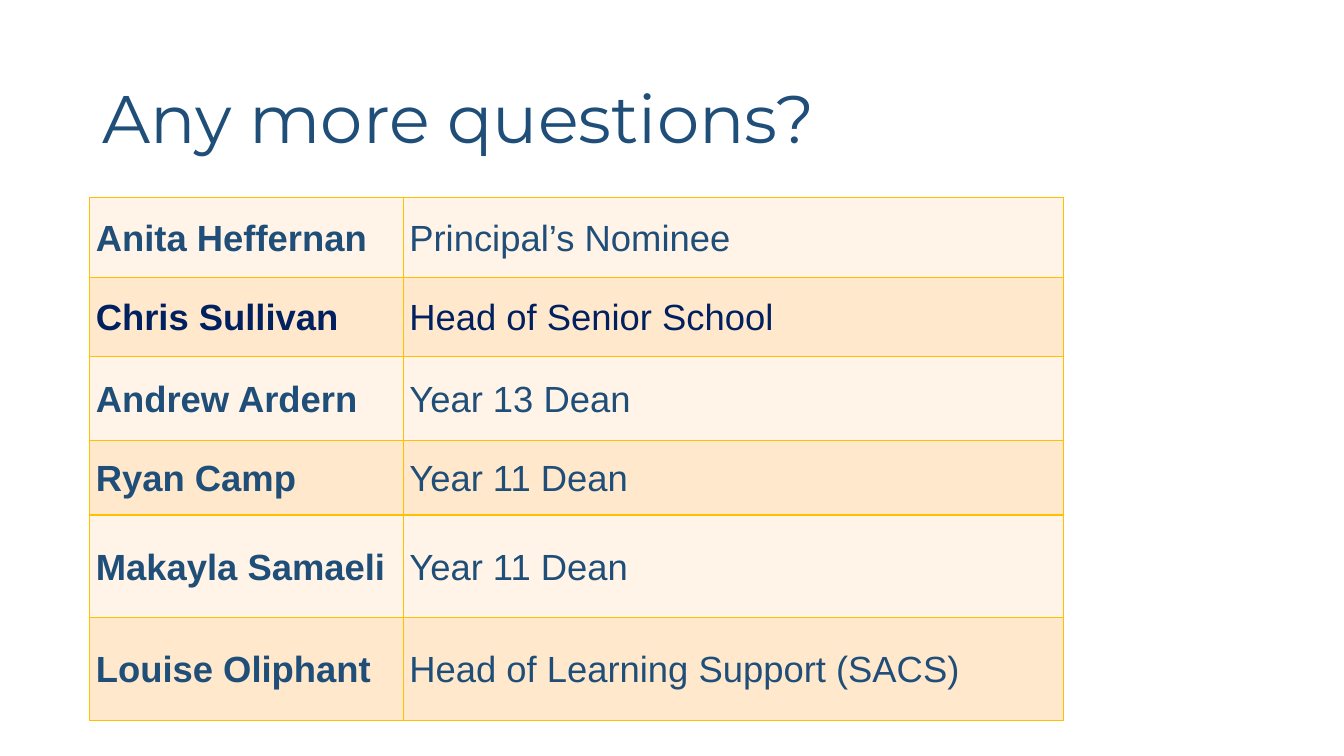
from dataclasses import dataclass

from lxml.etree import SubElement
from pptx import Presentation
from pptx.dml.color import RGBColor
from pptx.enum.text import MSO_ANCHOR
from pptx.oxml.ns import qn
from pptx.slide import Slide
from pptx.table import _Cell
from pptx.text.text import TextFrame
from pptx.util import Inches, Pt


@dataclass(frozen=True)
class Theme:
    blue: str = "1F4E79"
    navy: str = "002060"
    gold: str = "FFC000"
    bands: tuple[str, str] = ("FFF4E7", "FFE8CC")
    head: str = "Montserrat"
    body: str = "Arial"
    large: int = 48
    small: int = 26
    rule: int = 1


THEME = Theme()


@dataclass(frozen=True)
class Person:
    name: str
    role: str
    high: float
    color: str = THEME.blue


STAFF = (
    Person("Anita Heffernan", "Principal’s Nominee", 0.79),
    Person("Chris Sullivan", "Head of Senior School", 0.79, THEME.navy),
    Person("Andrew Ardern", "Year 13 Dean", 0.83),
    Person("Ryan Camp", "Year 11 Dean", 0.74),
    Person("Makayla Samaeli", "Year 11 Dean", 1.02),
    Person("Louise Oliphant", "Head of Learning Support (SACS)", 1.02),
)
WIDTHS = (3.11, 6.55)


def write(frame: TextFrame, text: str, *, font: str, size: int, color: str,
          bold: bool = False, line: float = 1.0, after: int = 0) -> None:
    """Write one formatted paragraph into a text frame."""
    para = frame.paragraphs[0]
    para.line_spacing = line
    para.space_after = Pt(after)
    run = para.add_run()
    run.text = text
    run.font.name = font
    run.font.size = Pt(size)
    run.font.bold = bold
    run.font.color.rgb = RGBColor.from_string(color)


def edge(cell: _Cell) -> None:
    """Draw the four gold borders of a cell."""
    props = cell._tc.get_or_add_tcPr()
    for side in ("lnL", "lnR", "lnT", "lnB"):
        line = SubElement(props, qn(f"a:{side}"), w=str(Pt(THEME.rule)))
        fill = SubElement(line, qn("a:solidFill"))
        SubElement(fill, qn("a:srgbClr"), val=THEME.gold)


def style(cell: _Cell, band: str) -> None:
    """Set the borders, fill and margins of a cell."""
    edge(cell)
    cell.fill.solid()
    cell.fill.fore_color.rgb = RGBColor.from_string(band)
    cell.vertical_anchor = MSO_ANCHOR.MIDDLE
    cell.margin_left = cell.margin_right = Inches(0.06)
    cell.margin_top = cell.margin_bottom = 0


def title(slide: Slide) -> None:
    """Add the slide heading."""
    box = slide.shapes.add_textbox(
        Inches(0.92), Inches(0.94), Inches(11.5), Inches(0.54))
    frame = box.text_frame
    frame.word_wrap = True
    frame.vertical_anchor = MSO_ANCHOR.MIDDLE
    write(frame, "Any more questions?", font=THEME.head, size=THEME.large,
          color=THEME.blue, line=0.9)


def roster(slide: Slide) -> None:
    """Add the table of staff and their roles."""
    table = slide.shapes.add_table(
        len(STAFF), len(WIDTHS), Inches(0.89), Inches(1.96),
        Inches(sum(WIDTHS)), Inches(sum(p.high for p in STAFF))).table
    table.first_row = table.horz_banding = False
    for col, width in zip(table.columns, WIDTHS):
        col.width = Inches(width)
    for row, person in enumerate(STAFF):
        table.rows[row].height = Inches(person.high)
        for col, text in enumerate((person.name, person.role)):
            cell = table.cell(row, col)
            style(cell, THEME.bands[row % 2])
            write(cell.text_frame, text, font=THEME.body, size=THEME.small,
                  color=person.color, bold=col == 0, line=1.06, after=8)


def main() -> None:
    """Build and save the slide."""
    deck = Presentation()
    deck.slide_width, deck.slide_height = Inches(13.33), Inches(7.5)
    slide = deck.slides.add_slide(deck.slide_layouts[6])
    title(slide)
    roster(slide)
    deck.save("out.pptx")


if __name__ == "__main__":
    main()
